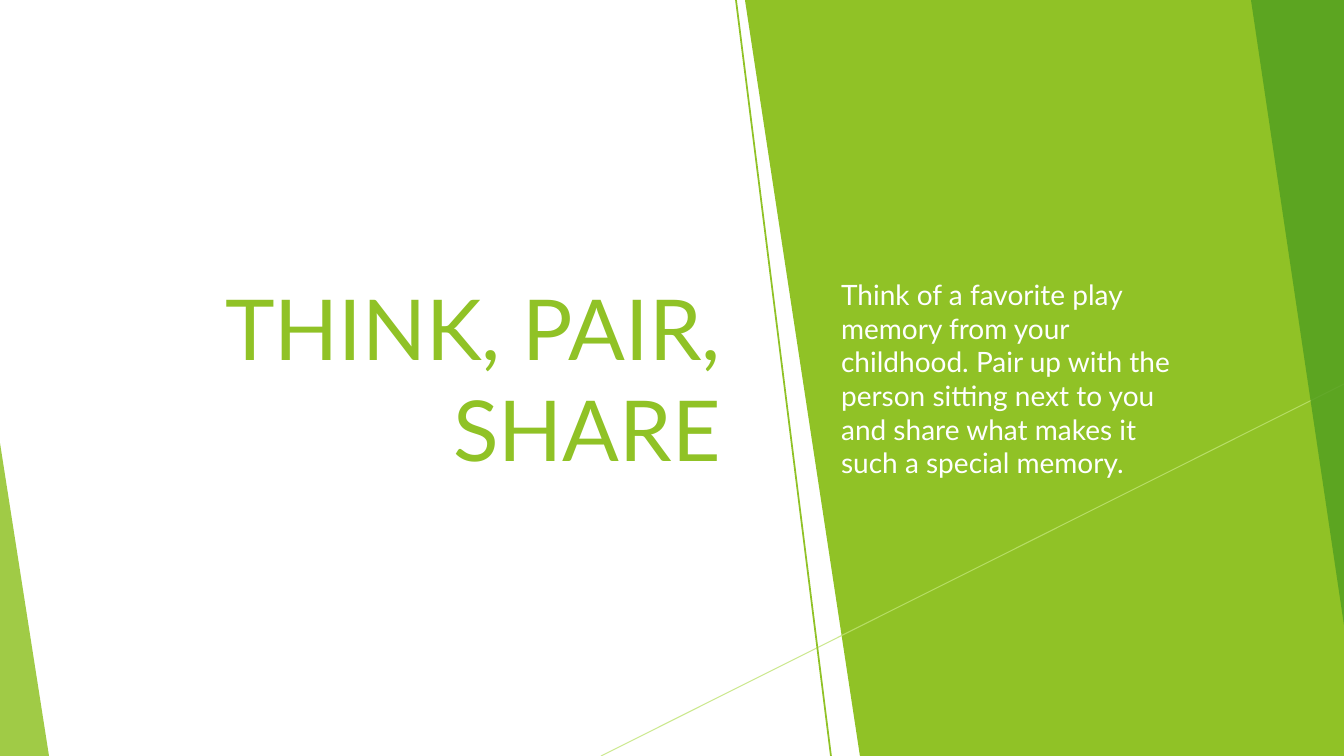
from pptx import Presentation
from pptx import util as u
from pptx.dml.color import RGBColor
from pptx.enum import shapes, text
from pptx.oxml.ns import qn
from lxml import etree

PX = 914400 / 100.8
W, H = 1344, 756
COLORS = {"white": "FFFFFF", "green": "90C226", "dark": "54A021", "pale": "C0E474"}


def px(n):
    """Turn pixels into EMU."""
    return u.Emu(round(n * PX))


def paint(fill, color, alpha=100):
    """Give a fill a solid colour with an opacity in percent."""
    fill.solid()
    fill.fore_color.rgb = RGBColor.from_string(COLORS[color])
    if alpha < 100:
        clr = fill._xPr.find(qn("a:solidFill"))[0]
        etree.SubElement(clr, qn("a:alpha"), val=str(alpha * 1000))


def add_polygon(slide, points, color, alpha=100):
    """Draw a closed, filled outline through the points."""
    pts = [(px(x), px(y)) for x, y in points]
    builder = slide.shapes.build_freeform(*pts[0])
    builder.add_line_segments(pts[1:], close=True)
    sp = builder.convert_to_shape()
    sp.shadow.inherit = False
    paint(sp.fill, color, alpha)
    sp.line.fill.background()


def add_rule(slide, start, end, color, width, alpha=100):
    """Draw a straight line between two points."""
    cxn = slide.shapes.add_connector(
        shapes.MSO_CONNECTOR.STRAIGHT, *map(px, start + end))
    cxn.line.width = u.Pt(width)
    paint(cxn.line.fill, color, alpha)
    etree.SubElement(cxn._element.spPr, qn("a:effectLst"))


def fill_text(sp, box, words, size, color, align, before=0):
    """Move a placeholder into the box, to the front, and set its text."""
    sp.left, sp.top, sp.width, sp.height = map(px, box)
    sp._element.getparent().append(sp._element)
    tf = sp.text_frame
    tf.word_wrap = True
    tf.auto_size = text.MSO_AUTO_SIZE.NONE
    tf.vertical_anchor = text.MSO_ANCHOR.MIDDLE
    p = tf.paragraphs[0]
    p.alignment = align
    p.space_before = u.Pt(before)
    pPr = p._p.get_or_add_pPr()
    pPr.set("marL", "0")
    pPr.set("indent", "0")
    etree.SubElement(pPr, qn("a:buNone"))
    r = p.add_run()
    r.text = words
    r.font.name = "Lato"
    r.font.size = u.Pt(size)
    r.font.color.rgb = RGBColor.from_string(COLORS[color])


def add_backdrop(slide, x, y, w, h):
    """Place the slanted panels and thin lines in the slide area."""
    right, bottom = x + w, y + h
    add_polygon(slide, [(x, y + 443), (x + 49, bottom), (x, bottom)], "green", 85)
    add_polygon(slide, [(x + 745, y), (right, y), (right, bottom), (x + 860, bottom)],
                "green")
    add_rule(slide, (right, y + 384), (x + 601, bottom), "pale", 0.75, 80)
    add_rule(slide, (x + 736, y), (x + 831, bottom), "green", 1.25)
    add_polygon(slide, [(right - 93, y), (right, y), (right, y + 625)], "dark", 85)


def add_prompt_slide(prs, title, prompt):
    """Add a slide with a title at left and a prompt on the green panel."""
    slide = prs.slides.add_slide(prs.slide_layouts[1])
    paint(slide.background.fill, "white")
    add_backdrop(slide, 0, 0, W, H)
    fill_text(slide.placeholders[1], (831, 209, 378, 339), prompt, size=20,
              color="white", align=text.PP_ALIGN.LEFT, before=10)
    fill_text(slide.shapes.title, (92, 94, 639, 567), title, size=60,
              color="green", align=text.PP_ALIGN.RIGHT)


def main():
    """Build and save the presentation."""
    prs = Presentation()
    prs.slide_width, prs.slide_height = px(W), px(H)
    add_prompt_slide(
        prs, "THINK, PAIR, SHARE",
        "Think of a favorite play memory from your childhood. Pair up with the "
        "person sitting next to you and share what makes it such a special memory.")
    prs.save("out.pptx")


if __name__ == "__main__":
    main()
